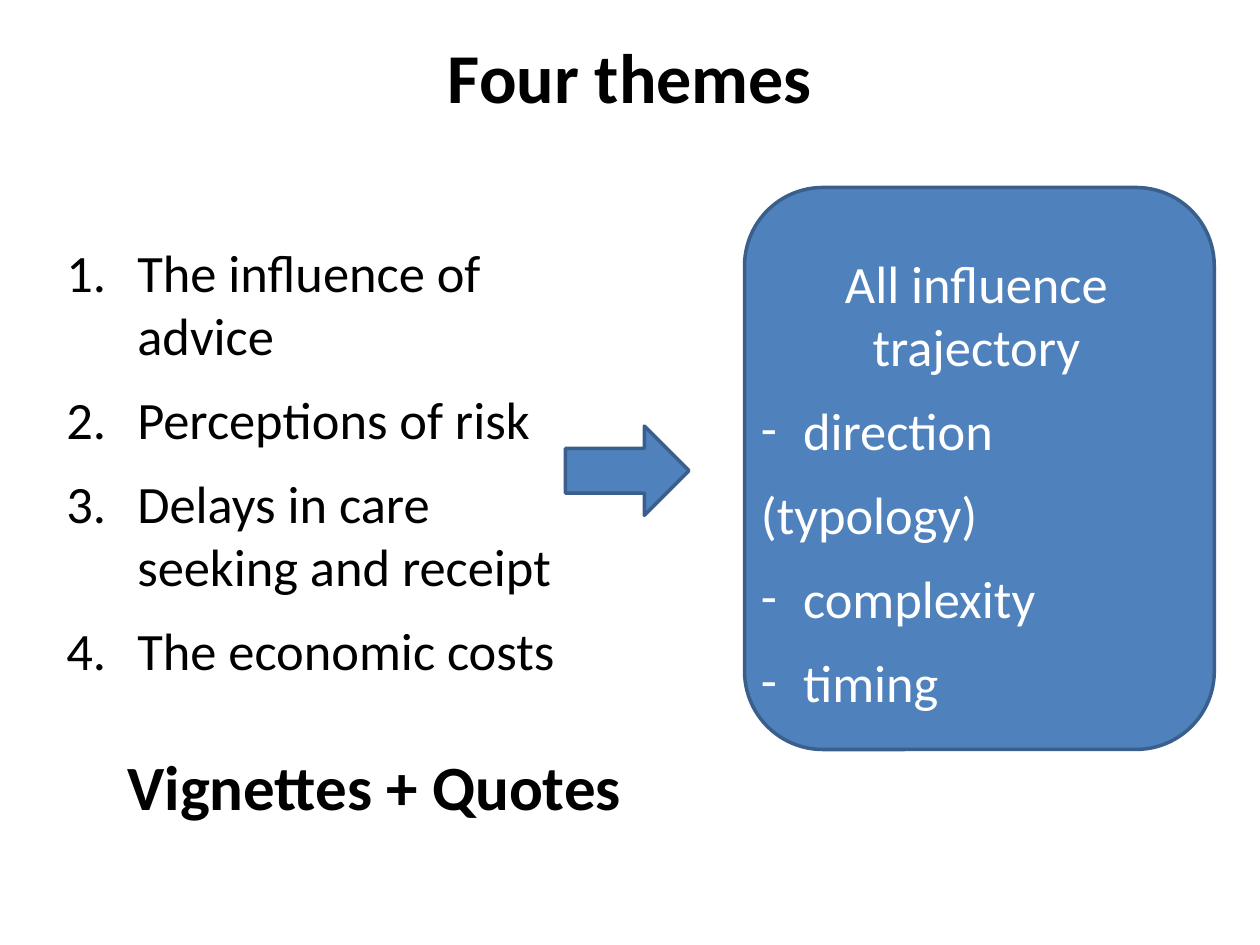
from pptx import Presentation, util as u
from pptx.dml.color import RGBColor
from pptx.enum import shapes, text
from lxml import etree

HUE = {"fill": "4F81BD", "edge": "3A5F8C", "dark": "000000", "light": "FFFFFF"}
NS = "{http://schemas.openxmlformats.org/drawingml/2006/main}"
MID = text.PP_ALIGN.CENTER
LEFT = text.PP_ALIGN.LEFT

deck = Presentation()
deck.slide_width, deck.slide_height = u.Cm(25.4), u.Cm(19.05)
slide = deck.slides.add_slide(deck.slide_layouts[6])


def block(kind, area):
    item = slide.shapes.add_shape(kind, *map(u.Cm, area))
    item.shadow.inherit = False
    item.fill.solid()
    item.fill.fore_color.rgb = RGBColor.from_string(HUE["fill"])
    item.line.color.rgb = RGBColor.from_string(HUE["edge"])
    item.line.width = u.Pt(2)


def words(area, rows, hue, look, gap=0):
    frame = slide.shapes.add_textbox(*map(u.Cm, area)).text_frame
    frame.word_wrap = True
    for n, (line, align, mark, hang) in enumerate(rows):
        para = frame.add_paragraph() if n else frame.paragraphs[0]
        para.alignment = align
        para.space_before = u.Pt(gap)
        run = para.add_run()
        run.text = line
        run.font.color.rgb = RGBColor.from_string(HUE[hue])
        for key, value in look.items():
            setattr(run.font, key, value)
        if mark:
            props = para._p.get_or_add_pPr()
            props.set("marL", str(u.Cm(hang)))
            props.set("indent", str(-u.Cm(hang)))
            etree.SubElement(props, NS + "buFont", typeface="Calibri")
            if mark == "-":
                etree.SubElement(props, NS + "buChar", char=mark)
            else:
                etree.SubElement(props, NS + "buAutoNum", type=mark)


plain = {"name": "Calibri", "size": u.Pt(30), "bold": False}
head = {"name": "Calibri", "size": u.Pt(40), "bold": True}
foot = {"name": "Calibri", "size": u.Pt(36), "bold": True}

themes = [
    "The influence of advice",
    "Perceptions of risk",
    "Delays in care seeking and receipt",
    "The economic costs",
]
effects = [
    ("All influence trajectory", MID, None, 0),
    (" direction", LEFT, "-", 0.61),
    ("(typology)", LEFT, None, 0),
    (" complexity", LEFT, "-", 0.61),
    (" timing", LEFT, "-", 0.61),
]

block(shapes.MSO_SHAPE.ROUNDED_RECTANGLE, (15.01, 3.78, 9.47, 11.33))
words((1.27, 0.56, 22.86, 2.57), [("Four themes", MID, None, 0)], "dark", head)
words((1.09, 4.72, 11.02, 10.21),
      [(line, LEFT, "arabicPeriod", 1.43) for line in themes], "dark", plain, 12)
words((15.09, 4.93, 9.19, 9.58), effects, "light", plain, 12)
block(shapes.MSO_SHAPE.RIGHT_ARROW, (11.4, 8.59, 2.49, 1.8))
words((0, 14.94, 15.09, 1.78), [("Vignettes + Quotes", MID, None, 0)], "dark", foot, 18)

deck.save("out.pptx")
